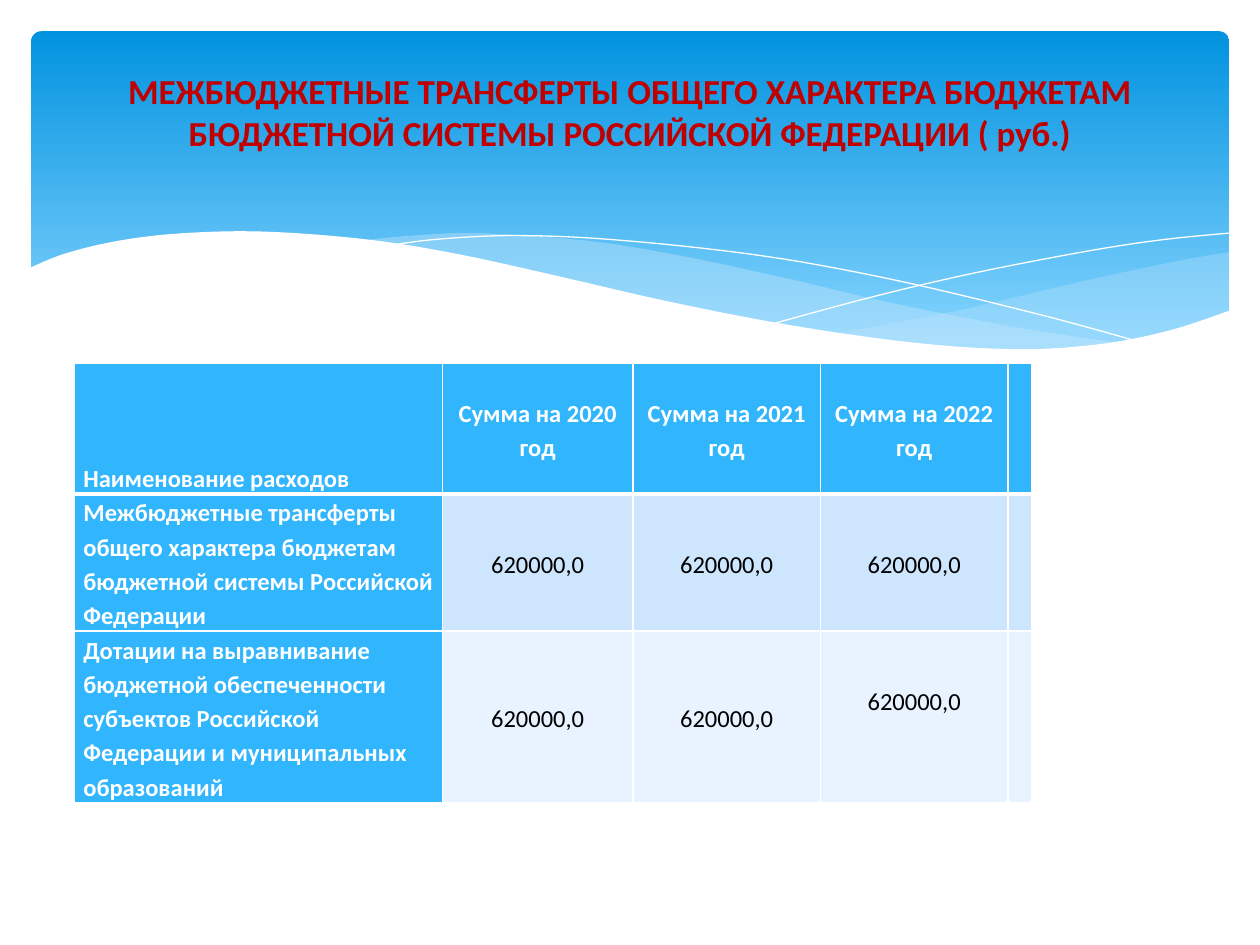
from dataclasses import dataclass
from pptx import Presentation
from pptx.dml.color import RGBColor as RGB
from pptx.enum.shapes import MSO_SHAPE as SHAPE
from pptx.enum.text import MSO_ANCHOR as ANCHOR, PP_ALIGN as ALIGN
from pptx.oxml import parse_xml
from pptx.oxml.ns import nsdecls, qn
from pptx.util import Cm, Pt


@dataclass(frozen=True)
class Theme:
    font: str = "Calibri"
    title_size: int = 20
    cell_size: int = 14
    title: str = "C00000"
    white: str = "FFFFFF"
    black: str = "000000"
    accent: str = "31B6FD"
    bands: tuple = ("CEE5FE", "E8F3FF")
    sky: tuple = ((0, "0293E0"), (0.9, "83D3FE"))
    swell: str = "C6E7FC"


def smooth(pts, steps=6):
    ext = [pts[0], *pts, pts[-1]]
    out = [pts[0]]
    for a, b, c, d in zip(ext, ext[1:], ext[2:], ext[3:]):
        for i in range(1, steps + 1):
            t = i / steps
            out.append(tuple(
                (2 * q + (r - p) * t + (2 * p - 5 * q + 4 * r - s) * t**2
                 + (3 * q - p - 3 * r + s) * t**3) / 2
                for p, q, r, s in zip(a, b, c, d)))
    return out


class Deck:
    """Holds the theme and the current slide, and draws each kind of element."""

    def __init__(self, prs, theme):
        self.theme = theme
        self.s = prs.slides.add_slide(prs.slide_layouts[6])

    def banner(self, x, y, w, h):
        sp = self.s.shapes.add_shape(SHAPE.ROUNDED_RECTANGLE, Cm(x), Cm(y), Cm(w), Cm(h))
        sp.shadow.inherit = False
        sp.adjustments[0] = 0.03
        sp.line.fill.background()
        sp.fill.gradient()
        sp.fill.gradient_angle = 270
        for stop, (pos, color) in zip(sp.fill.gradient_stops, self.theme.sky):
            stop.position = pos
            stop.color.rgb = RGB.from_string(color)

    def outline(self, pts, close):
        (x, y), *rest = [(Cm(px), Cm(py)) for px, py in pts]
        builder = self.s.shapes.build_freeform(x, y)
        builder.add_line_segments(rest, close=close)
        sp = builder.convert_to_shape()
        sp.shadow.inherit = False
        return sp

    def wave(self, pts, color, alpha=100):
        sp = self.outline(pts, True)
        sp.line.fill.background()
        sp.fill.solid()
        sp.fill.fore_color.rgb = RGB.from_string(color)
        if alpha < 100:
            clr = sp._element.spPr.find(qn("a:solidFill"))[0]
            clr.append(parse_xml(f'<a:alpha {nsdecls("a")} val="{alpha * 1000}"/>'))

    def strand(self, pts):
        sp = self.outline(smooth(pts), False)
        sp.fill.background()
        sp.line.color.rgb = RGB.from_string(self.theme.white)
        sp.line.width = Pt(0)

    def add_text(self, tf, text, size, color, bold, align):
        p = tf.paragraphs[0]
        p.alignment = align
        r = p.add_run()
        r.text = text
        r.font.name = self.theme.font
        r.font.size = Pt(size)
        r.font.bold = bold
        r.font.color.rgb = RGB.from_string(color)
        return p

    def title(self, text, x, y, w, h):
        tf = self.s.shapes.add_textbox(Cm(x), Cm(y), Cm(w), Cm(h)).text_frame
        tf.word_wrap = True
        tf.vertical_anchor = ANCHOR.MIDDLE
        tf.margin_bottom = Cm(0.98)
        self.add_text(tf, text, self.theme.title_size, self.theme.title, True, ALIGN.CENTER)

    def borders(self, cell, widths):
        tcPr = cell._tc.get_or_add_tcPr()
        for side, width in zip("LRTB", widths):
            tcPr.append(parse_xml(
                f'<a:ln{side} {nsdecls("a")} w="{Pt(width)}"><a:solidFill>'
                f'<a:srgbClr val="{self.theme.white}"/></a:solidFill></a:ln{side}>'))

    def cell(self, cell, text, row, col):
        th = self.theme
        key = row == 0 or col == 0
        self.borders(cell, (1, 1, 3 if row == 1 else 1, 3 if row == 0 else 1))
        cell.fill.solid()
        cell.fill.fore_color.rgb = RGB.from_string(th.accent if key else th.bands[row - 1])
        cell.margin_left = cell.margin_right = Cm(0.18)
        cell.margin_top = cell.margin_bottom = 0
        cell.vertical_anchor = ANCHOR.MIDDLE if col else ANCHOR.BOTTOM
        if text:
            p = self.add_text(cell.text_frame, text, th.cell_size, th.white if key else th.black,
                              key, ALIGN.CENTER if col else ALIGN.LEFT)
            p.line_spacing = 1.15

    def table(self, rows, x, y, widths, heights):
        gf = self.s.shapes.add_table(len(rows), len(widths), Cm(x), Cm(y),
                                     Cm(sum(widths)), Cm(sum(heights)))
        tbl = gf.table
        tbl.first_row = tbl.horz_banding = False
        for column, width in zip(tbl.columns, widths):
            column.width = Cm(width)
        for i, (texts, height) in enumerate(zip(rows, heights)):
            tbl.rows[i].height = Cm(height)
            for j, text in enumerate(texts):
                self.cell(tbl.cell(i, j), text, i, j)
        return tbl


RIGHT_TOP = [(24.79, 5.08), (23.75, 5.26), (21.87, 5.66), (19.13, 6.3), (16.79, 6.73)]
RIGHT_BOTTOM = [(16.79, 6.73), (17.91, 6.88), (19.23, 7.01), (20.68, 7.06),
                (22.15, 6.96), (23.57, 6.68), (24.79, 6.27)]
MIDDLE_TOP = [(22.68, 6.93), (20.5, 6.6), (17.93, 6.1), (15.98, 5.64), (13.74, 5.16),
              (11.81, 4.85), (9.65, 4.7), (8.33, 4.75), (7.26, 4.85)]
MIDDLE_BOTTOM = [(7.26, 4.85), (9.19, 5.16), (11.4, 5.64), (13.46, 6.1), (15.7, 6.55),
                 (17.65, 6.86), (19.63, 7.04), (21.03, 7.06), (22.68, 6.93)]
FALLING = [(7.85, 4.95), (8.74, 4.83), (10.19, 4.75), (11.91, 4.8), (14.12, 5),
           (16.15, 5.28), (18.47, 5.74), (21.11, 6.38), (23.04, 6.91)]
RISING = [(15.57, 6.53), (17.65, 5.97), (19.71, 5.49), (22, 5.05), (23.47, 4.83), (24.77, 4.7)]
FRONT = [(24.82, 6.25), (23.62, 6.65), (22.23, 6.93), (20.55, 7.04), (18.44, 6.91),
         (15.9, 6.55), (13.44, 6.07), (11.35, 5.59), (9.27, 5.13), (7.42, 4.83),
         (5.36, 4.67), (3.71, 4.7), (2.41, 4.85), (1.32, 5.11), (0.58, 5.41)]
FRONT_BASE = [(0.58, 8.36), (24.82, 8.36)]

AMOUNTS = ["620000,0"] * 3
ROWS = [
    ["Наименование расходов", *(f"Сумма на {year} год" for year in (2020, 2021, 2022)), ""],
    ["Межбюджетные трансферты общего характера бюджетам бюджетной системы "
     "Российской Федерации", *AMOUNTS, ""],
    ["Дотации на выравнивание бюджетной обеспеченности субъектов Российской "
     "Федерации и муниципальных образований", *AMOUNTS, ""],
]


def main():
    prs = Presentation()
    prs.slide_width, prs.slide_height = Cm(25.4), Cm(19.05)
    theme = Theme()
    deck = Deck(prs, theme)
    deck.banner(0.63, 0.63, 24.15, 6.86)
    deck.wave(smooth(RIGHT_TOP) + smooth(RIGHT_BOTTOM), theme.swell, 29)
    deck.wave(smooth(MIDDLE_TOP) + smooth(MIDDLE_BOTTOM), theme.swell, 40)
    deck.strand(FALLING)
    deck.strand(RISING)
    deck.wave(smooth(FRONT) + FRONT_BASE, theme.white)
    tbl = deck.table(ROWS, 1.5, 7.32, (7.42, 3.84, 3.78, 3.78, 0.48), (2.64, 2.75, 3.45))
    tbl.cell(2, 3).margin_bottom = Cm(0.7)
    deck.title("МЕЖБЮДЖЕТНЫЕ ТРАНСФЕРТЫ ОБЩЕГО ХАРАКТЕРА БЮДЖЕТАМ БЮДЖЕТНОЙ СИСТЕМЫ "
               "РОССИЙСКОЙ ФЕДЕРАЦИИ ( руб.)", 1.27, 0.94, 22.86, 3.48)
    prs.save("out.pptx")


if __name__ == "__main__":
    main()
